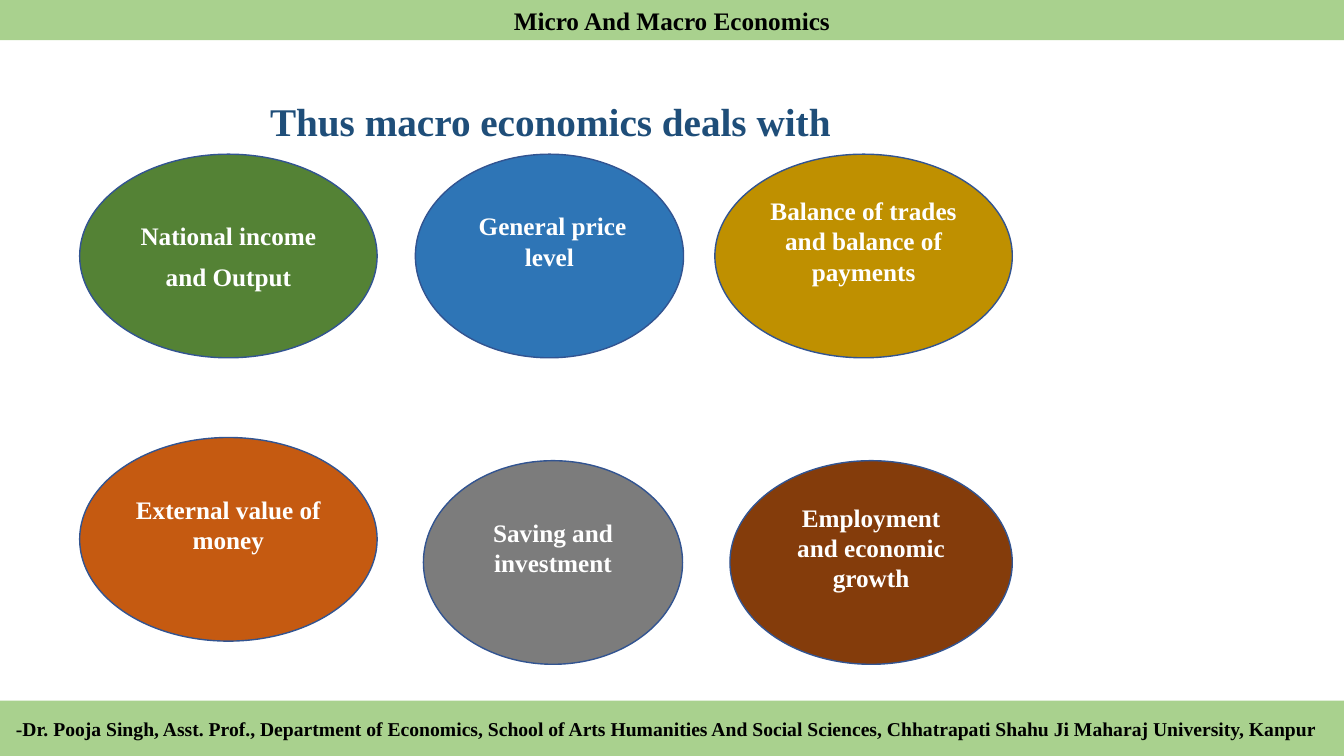
from pptx import Presentation
from pptx import util as u
from pptx.dml.color import RGBColor
from pptx.enum import shapes, text

FONT = "Times New Roman"
COLORS = {
    "band": "A9D18E", "outline": "325491", "title": "1F4E79",
    "white": "FFFFFF", "black": "000000",
    "green": "548235", "blue": "2E75B6", "gold": "BF9000",
    "brown": "843C0B", "gray": "7C7C7C", "orange": "C55A11",
}
OVAL_HEIGHT = 2.02
TOP_ROW, BOTTOM_ROW = 1.53, 4.57

# left, top, width, colour, lines, bottom inset, space after
TOPICS = [
    (0.79, TOP_ROW, 2.95, "green", ["National income", "and Output"], 0.05, 8),
    (4.12, TOP_ROW, 2.66, "blue", [" General price level"], 0.35, 0),
    (7.09, TOP_ROW, 2.95, "gold", ["Balance of trades and balance of payments"], 0.35, 0),
    (7.24, BOTTOM_ROW, 2.8, "brown", ["Employment and economic growth"], 0.35, 0),
    (4.2, BOTTOM_ROW, 2.57, "gray", ["Saving and investment"], 0.35, 0),
    (0.79, 4.34, 2.95, "orange", ["External value of money"], 0.35, 0),
]


def rgb(name):
    return RGBColor.from_string(COLORS[name])


def write(sp, lines, size=18, color="black", align=text.PP_ALIGN.CENTER,
          anchor=text.MSO_ANCHOR.MIDDLE, right=0.1, bottom=0.05,
          space_after=0, line_spacing=1.0):
    """Fill a shape with bold paragraphs, one per line."""
    tf = sp.text_frame
    tf.word_wrap = True
    tf.vertical_anchor = anchor
    tf.margin_right = u.Inches(right)
    tf.margin_bottom = u.Inches(bottom)
    for i, line in enumerate(lines):
        p = tf.paragraphs[0] if i == 0 else tf.add_paragraph()
        p.alignment = align
        p.space_after = u.Pt(space_after)
        p.line_spacing = line_spacing
        r = p.add_run()
        r.text = line
        r.font.name = FONT
        r.font.size = u.Pt(size)
        r.font.bold = True
        r.font.color.rgb = rgb(color)


def add_filled(s, kind, left, top, width, height, fill, outline=None):
    sp = s.shapes.add_shape(kind, u.Inches(left), u.Inches(top),
                            u.Inches(width), u.Inches(height))
    sp.shadow.inherit = False
    sp.fill.solid()
    sp.fill.fore_color.rgb = rgb(fill)
    if outline:
        sp.line.color.rgb = rgb(outline)
        sp.line.width = u.Pt(1)
    else:
        sp.line.fill.background()
    return sp


def add_title(s, title):
    sp = s.shapes.add_textbox(u.Inches(2.58), u.Inches(0.94),
                              u.Inches(6.05), u.Inches(0.58))
    write(sp, [title], size=28, color="title", align=text.PP_ALIGN.LEFT,
          line_spacing=0.9)


def add_topic(s, left, top, width, fill, lines, bottom, space_after):
    sp = add_filled(s, shapes.MSO_SHAPE.OVAL, left, top, width, OVAL_HEIGHT,
                    fill, "outline")
    write(sp, lines, color="white", bottom=bottom, space_after=space_after)


def add_band(s, top, height, line, **fmt):
    sp = add_filled(s, shapes.MSO_SHAPE.RECTANGLE, 0, top, 13.33, height, "band")
    write(sp, [line], **fmt)


def main():
    prs = Presentation()
    prs.slide_width = u.Inches(13.33)
    prs.slide_height = u.Inches(7.5)
    s = prs.slides.add_slide(prs.slide_layouts[6])
    add_title(s, "Thus macro economics deals with")
    for topic in TOPICS:
        add_topic(s, *topic)
    add_band(s, 6.95, 0.55,
             "-Dr. Pooja Singh, Asst. Prof., Department of Economics, "
             "School of Arts Humanities And Social Sciences, "
             "Chhatrapati Shahu Ji Maharaj University, Kanpur",
             size=14, right=0.2)
    add_band(s, 0, 0.4, "Micro And Macro Economics", anchor=text.MSO_ANCHOR.TOP)
    prs.save("out.pptx")


if __name__ == "__main__":
    main()
